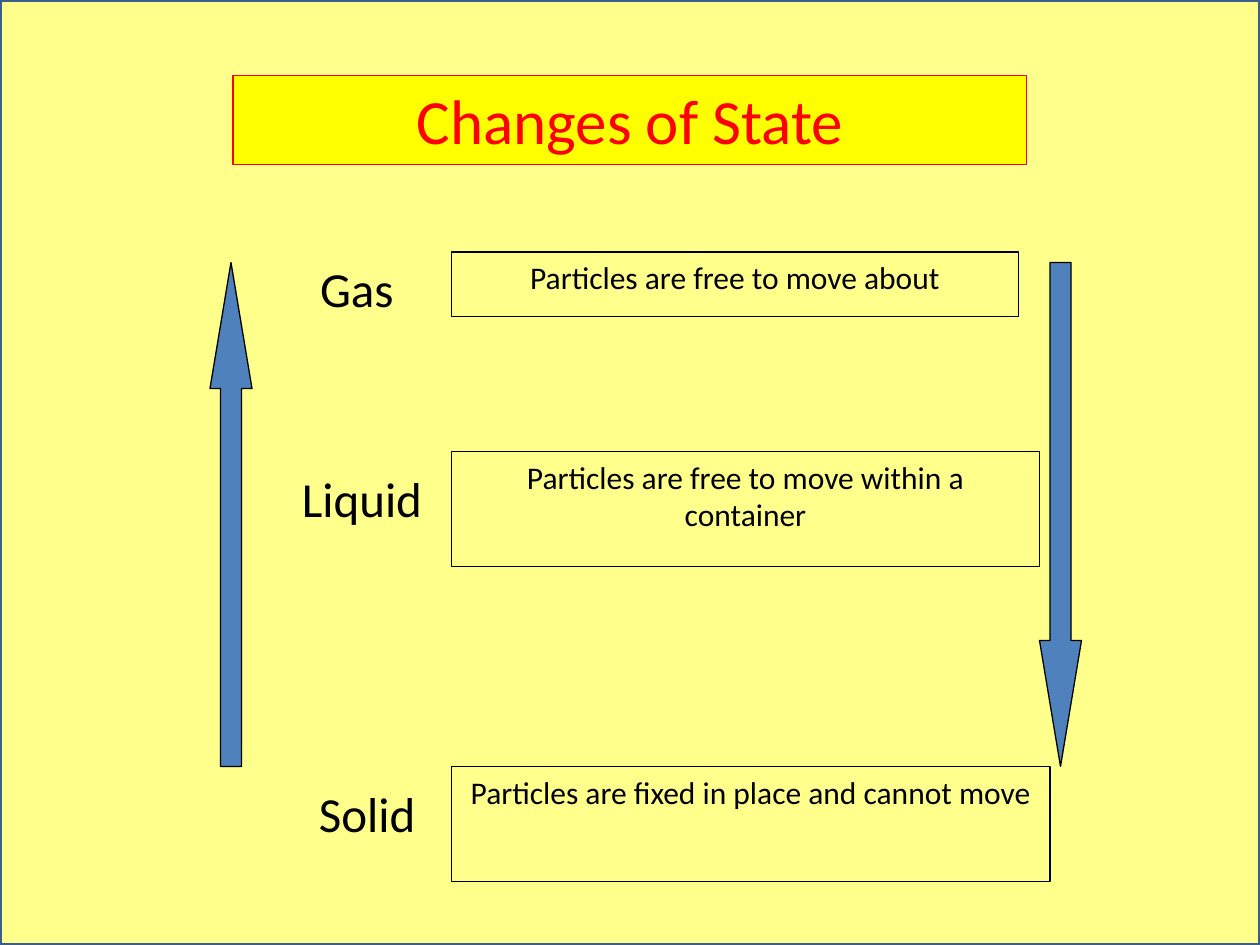
import dataclasses

import pptx
import pptx.dml.color
import pptx.enum.shapes
import pptx.enum.text
import pptx.util

SHAPES = pptx.enum.shapes.MSO_SHAPE
UNIT = pptx.util.Inches(1) / 12  # the grid has 120 columns and 90 rows
COLUMNS, ROWS = 120, 90


@dataclasses.dataclass(frozen=True)
class Theme:
    font: str = "Calibri"
    page: str = "FFFF99"
    panel: str = "FFFF8B"
    panel_edge: str = "3A5F8C"
    title_fill: str = "FFFF00"
    title_ink: str = "FF0000"
    arrow: str = "4F81BD"
    ink: str = "000000"
    title_size: int = 36
    label_size: int = 28
    body_size: int = 18


THEME = Theme()


def color(value):
    return pptx.dml.color.RGBColor.from_string(value)


def grid(box):
    """Turn (column, row, columns, rows) into slide lengths."""
    return [round(part * UNIT) for part in box]


def add_block(page, kind, box, fill, line, width):
    block = page.shapes.add_shape(kind, *grid(box))
    block.shadow.inherit = False
    if fill:
        block.fill.solid()
        block.fill.fore_color.rgb = color(fill)
    else:
        block.fill.background()
    block.line.color.rgb = color(line)
    block.line.width = pptx.util.Pt(width)
    return block


def write(shape, text, size, ink):
    frame = shape.text_frame
    frame.word_wrap = True
    frame.vertical_anchor = pptx.enum.text.MSO_ANCHOR.TOP
    para = frame.paragraphs[0]
    para.alignment = pptx.enum.text.PP_ALIGN.CENTER
    span = para.add_run()
    span.text = text
    span.font.name = THEME.font
    span.font.size = pptx.util.Pt(size)
    span.font.color.rgb = color(ink)


def add_background(page, box):
    page.background.fill.solid()
    page.background.fill.fore_color.rgb = color(THEME.page)
    add_block(page, SHAPES.RECTANGLE, box, THEME.panel, THEME.panel_edge, 2)


def add_title(page, box, text):
    title = add_block(page, SHAPES.RECTANGLE, box, THEME.title_fill,
                      THEME.title_ink, 0.75)
    write(title, text, THEME.title_size, THEME.title_ink)


def add_arrow(page, kind, box):
    arrow = add_block(page, kind, box, THEME.arrow, THEME.ink, 0.75)
    arrow.adjustments[0] = 0.5
    arrow.adjustments[1] = 3


def add_state(page, label_box, name, text_box, text):
    """A state's name with the text about its particles beside it."""
    label = page.shapes.add_textbox(*grid(label_box))
    write(label, name, THEME.label_size, THEME.ink)
    particles = add_block(page, SHAPES.RECTANGLE, text_box, None, THEME.ink, 1)
    write(particles, text, THEME.body_size, THEME.ink)


def main():
    deck = pptx.Presentation()
    deck.slide_width, deck.slide_height = grid((COLUMNS, ROWS))
    page = deck.slides.add_slide(deck.slide_layouts[6])

    add_background(page, (0, 0, COLUMNS, ROWS))

    # Up arrow on the left, down arrow on the right
    add_arrow(page, SHAPES.UP_ARROW, (20, 25, 4, 48))
    add_arrow(page, SHAPES.DOWN_ARROW, (99, 25, 4, 48))

    # Name, label row and columns, then text row, columns, rows and wording
    states = [
        ("Solid ", 74, 17, 73, 57, 10.95,
         "Particles are fixed in place and cannot move"),
        ("Liquid ", 44, 16, 43, 56, 10.95,
         "Particles are free to move within a container"),
        ("Gas ", 24, 15, 24, 54, 6.15,
         "Particles are free to move about"),
    ]
    for name, label_row, label_width, row, width, height, text in states:
        add_state(page, (27, label_row, label_width, 6.85), name,
                  (43, row, width, height), text)

    # Title
    add_title(page, (22.2, 7.2, 75.6, 8.5), "Changes of State")
    deck.save("out.pptx")


if __name__ == "__main__":
    main()
